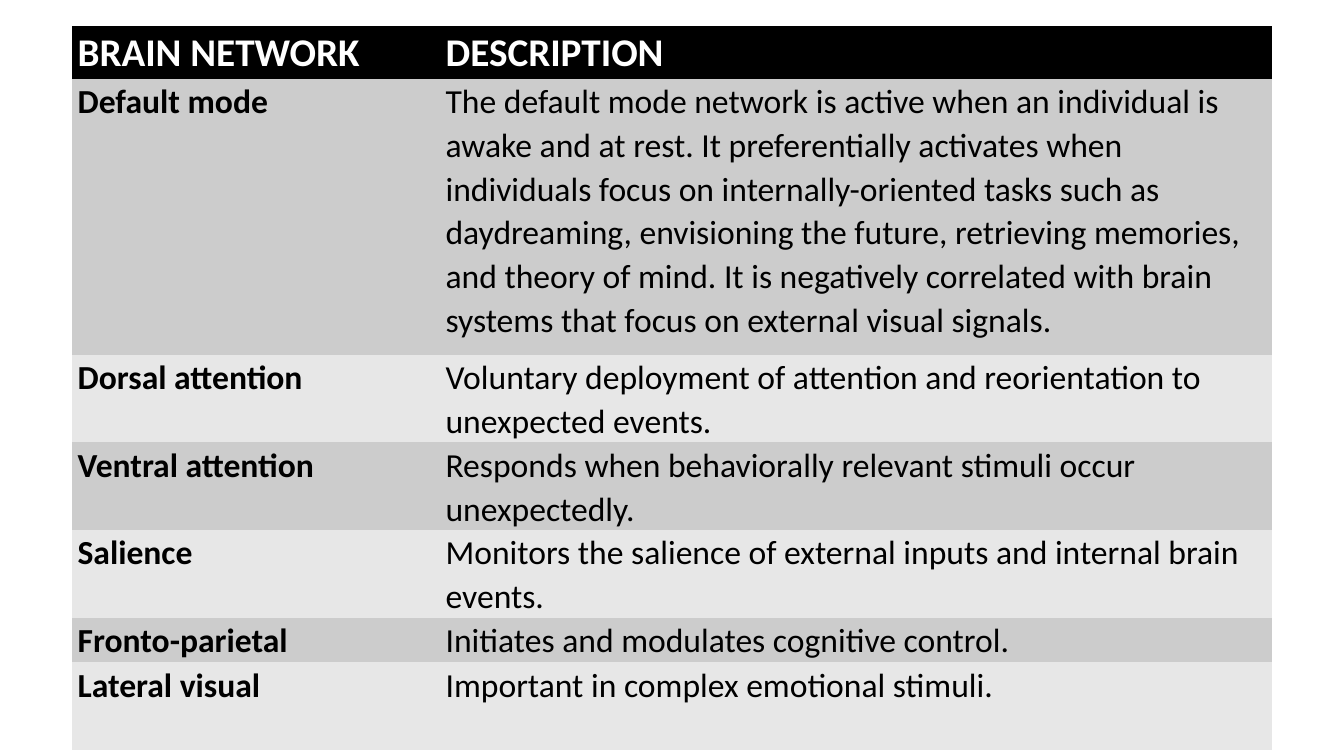
"""Build a slide with a table of brain networks and their descriptions."""
from pptx import Presentation
from pptx.dml.color import RGBColor
from pptx.oxml.ns import qn
from pptx.util import Inches, Pt

BLANK_LAYOUT = 6
PLAIN_STYLE = "{2D5ABB26-0587-4C30-8999-92F81FD0307C}"
COLUMN_WIDTHS = (3.65, 8.26)
BAND_FILLS = ("CCCCCC", "E7E7E7")
HEADINGS = ("BRAIN NETWORK", "DESCRIPTION")
HEADING_HEIGHT = 0.52
NETWORKS = (
    (2.74, "Default mode",
     "The default mode network is active when an individual is awake and at rest. "
     "It preferentially activates when individuals focus on internally-oriented "
     "tasks such as daydreaming, envisioning the future, retrieving memories, and "
     "theory of mind. It is negatively correlated with brain systems that focus on "
     "external visual signals."),
    (0.87, "Dorsal attention",
     "Voluntary deployment of attention and reorientation to unexpected events."),
    (0.87, "Ventral attention",
     "Responds when behaviorally relevant stimuli occur unexpectedly."),
    (0.87, "Salience",
     "Monitors the salience of external inputs and internal brain events."),
    (0.44, "Fronto-parietal", "Initiates and modulates cognitive control."),
    (0.87, "Lateral visual", "Important in complex emotional stimuli."),
)


def color(value):
    return RGBColor.from_string(value)


def fill_cell(cell, text, size, bold, text_color, fill_color):
    cell.margin_left = cell.margin_right = Inches(0.06)
    cell.margin_top = cell.margin_bottom = 0
    cell.fill.solid()
    cell.fill.fore_color.rgb = color(fill_color)
    cell.text = text
    para = cell.text_frame.paragraphs[0]
    para.line_spacing = 1.07
    para.font.name = "Calibri"
    para.font.size = Pt(size)
    para.font.bold = bold
    para.font.color.rgb = color(text_color)


def add_network_table(page):
    heights = [HEADING_HEIGHT] + [height for height, _, _ in NETWORKS]
    frame = page.shapes.add_table(
        len(heights), len(COLUMN_WIDTHS), Inches(0.71), Inches(0.26),
        Inches(sum(COLUMN_WIDTHS)), Inches(sum(heights)))
    next(frame.element.iter(qn("a:tableStyleId"))).text = PLAIN_STYLE
    table = frame.table
    for column, width in zip(table.columns, COLUMN_WIDTHS):
        column.width = Inches(width)
    for row, height in zip(table.rows, heights):
        row.height = Inches(height)
    for index, heading in enumerate(HEADINGS):
        fill_cell(table.cell(0, index), heading, 28, True, "FFFFFF", "000000")
    for index, (_, name, description) in enumerate(NETWORKS):
        band = BAND_FILLS[index % 2]
        fill_cell(table.cell(index + 1, 0), name, 24, True, "000000", band)
        fill_cell(table.cell(index + 1, 1), description, 24, False, "000000", band)


def main():
    deck = Presentation()
    deck.slide_width = Inches(13.33)
    deck.slide_height = Inches(7.5)
    page = deck.slides.add_slide(deck.slide_layouts[BLANK_LAYOUT])
    add_network_table(page)
    deck.save("out.pptx")


if __name__ == "__main__":
    main()
